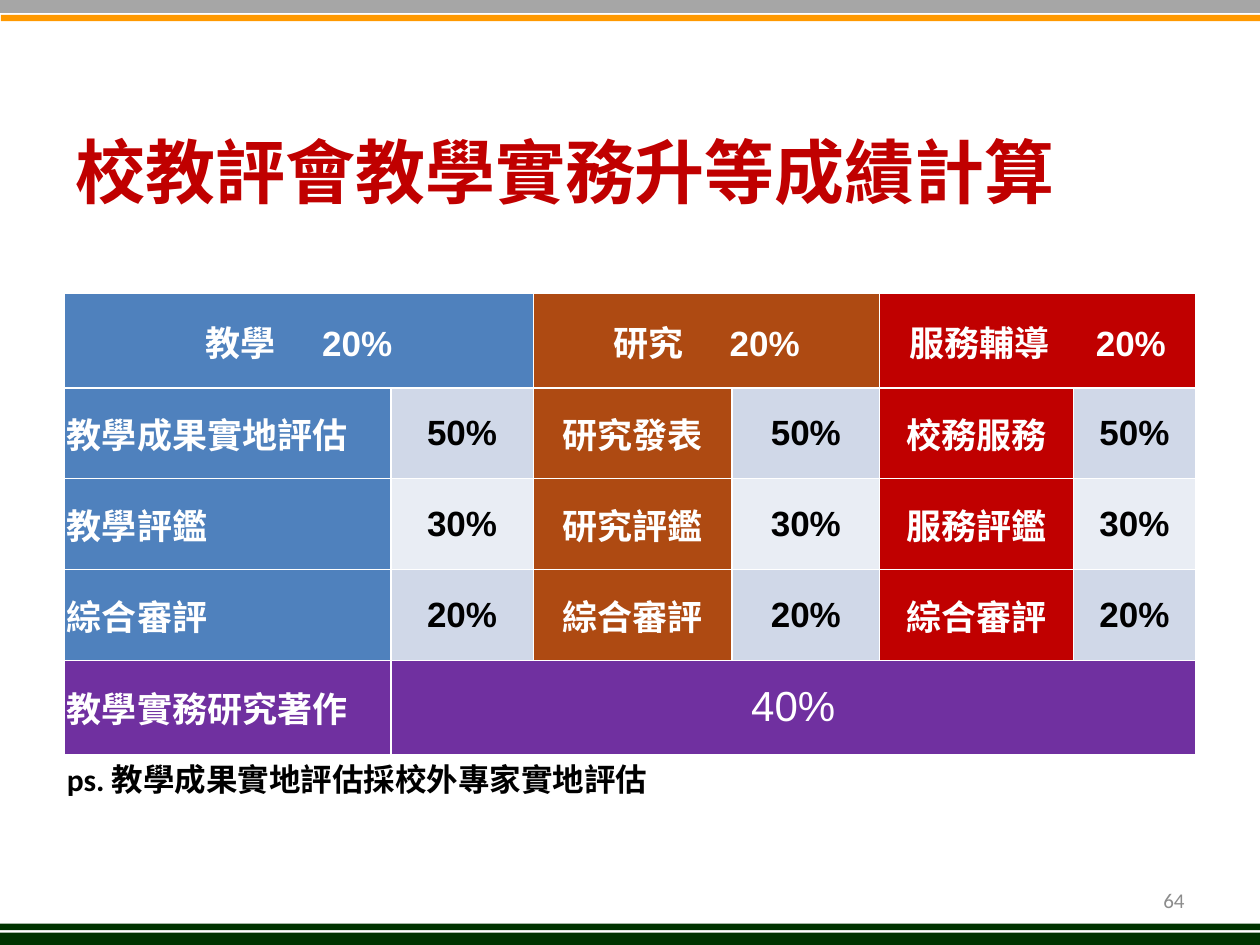
"""Build the slide on score weights for teaching-practice promotion."""
from lxml import etree
from pptx import Presentation
from pptx import util as u
from pptx.dml.color import RGBColor
from pptx.enum import shapes, text
from pptx.oxml.ns import qn

WHITE = RGBColor(0xFF, 0xFF, 0xFF)
BLACK = RGBColor(0x00, 0x00, 0x00)
GRAY = RGBColor(0xA6, 0xA6, 0xA6)
ORANGE = RGBColor(0xFF, 0x99, 0x00)
DARK_GREEN = RGBColor(0x00, 0x33, 0x00)
BLUE = RGBColor(0x4F, 0x81, 0xBD)
BROWN = RGBColor(0xAE, 0x4A, 0x12)
RED = RGBColor(0xC0, 0x00, 0x00)
PURPLE = RGBColor(0x70, 0x30, 0xA0)
BAND_DARK = RGBColor(0xD0, 0xD8, 0xE8)
BAND_LIGHT = RGBColor(0xE9, 0xED, 0xF4)
PAGE_GRAY = RGBColor(0x8C, 0x8C, 0x8C)
CJK_FONT = "Noto Sans CJK SC"
CENTER, LEFT, RIGHT = text.PP_ALIGN.CENTER, text.PP_ALIGN.LEFT, text.PP_ALIGN.RIGHT


def style(paragraph, size, color, font="Arial", bold=True, align=CENTER):
    paragraph.alignment = align
    for run in paragraph.runs:
        run.font.size = u.Pt(size)
        run.font.bold = bold
        run.font.color.rgb = color
        run.font.name = font
        etree.SubElement(run.font._element, qn("a:ea")).set("typeface", CJK_FONT)


def fill_cell(cell, words, fill, color=WHITE, size=20, **look):
    cell.margin_left = cell.margin_right = u.Cm(0.05)
    cell.margin_top = cell.margin_bottom = 0
    cell.vertical_anchor = text.MSO_ANCHOR.MIDDLE
    cell.fill.solid()
    cell.fill.fore_color.rgb = fill
    paragraph = cell.text_frame.paragraphs[0]
    for word in words:
        paragraph.add_run().text = word
    style(paragraph, size, color, **look)
    return paragraph


deck = Presentation()
deck.slide_width, deck.slide_height = u.Cm(25.4), u.Cm(19.05)
slide = deck.slides.add_slide(deck.slide_layouts[5])

for left, top, height, color in [
    (0, 0, 0.26, GRAY),
    (0.02, 0.3, 0.13, ORANGE),
    (-0.02, 18.8, 0.25, DARK_GREEN),
    (-0.02, 18.62, 0.13, DARK_GREEN),
]:
    stripe = slide.shapes.add_shape(
        shapes.MSO_SHAPE.RECTANGLE, u.Cm(left), u.Cm(top), u.Cm(25.42), u.Cm(height))
    stripe.shadow.inherit = False
    stripe.fill.solid()
    stripe.fill.fore_color.rgb = color
    stripe.line.fill.background()

title = slide.shapes.title
title.left, title.top, title.width, title.height = u.Cm(1.27), u.Cm(2.13), u.Cm(22.86), u.Cm(2.6)
title.text_frame.text = "校教評會教學實務升等成績計算"
title.text_frame.vertical_anchor = text.MSO_ANCHOR.MIDDLE
style(title.text_frame.paragraphs[0], 40, RED, CJK_FONT, align=LEFT)

column_widths = [6.58, 2.87, 4.01, 2.97, 3.91, 2.46]
row_heights = [1.9, 1.83, 1.83, 1.83, 1.9, 1.9]
scores = slide.shapes.add_table(
    6, 6, u.Cm(1.3), u.Cm(5.92), u.Cm(sum(column_widths)), u.Cm(sum(row_heights))).table
for column, width in zip(scores.columns, column_widths):
    column.width = u.Cm(width)
for row, height in zip(scores.rows, row_heights):
    row.height = u.Cm(height)

categories = [
    ("教學", BLUE, LEFT, ["教學成果實地評估", "教學評鑑", "綜合審評"]),
    ("研究", BROWN, CENTER, ["研究發表", "研究評鑑", "綜合審評"]),
    ("服務輔導", RED, CENTER, ["校務服務", "服務評鑑", "綜合審評"]),
]
weights = [("50%", BAND_DARK), ("30%", BAND_LIGHT), ("20%", BAND_DARK)]
for index, (category, color, align, items) in enumerate(categories):
    col = 2 * index
    scores.cell(0, col).merge(scores.cell(0, col + 1))
    heading = fill_cell(scores.cell(0, col), [category, " ", "20%"], color)
    heading.runs[1].font._element.set("spc", "2200")
    for row, (item, (weight, band)) in enumerate(zip(items, weights), start=1):
        fill_cell(scores.cell(row, col), [item], color, align=align)
        fill_cell(scores.cell(row, col + 1), [weight], band, BLACK)

scores.cell(4, 1).merge(scores.cell(4, 5))
fill_cell(scores.cell(4, 0), ["教學實務研究著作"], PURPLE, align=LEFT)
fill_cell(scores.cell(4, 1), ["40%"], PURPLE, size=24, bold=False)
scores.cell(5, 0).merge(scores.cell(5, 5))
fill_cell(scores.cell(5, 0), ["ps. 教學成果實地評估採校外專家實地評估"], WHITE, BLACK, 18,
          font="Calibri", align=LEFT)
scores.cell(5, 0).vertical_anchor = text.MSO_ANCHOR.TOP

page_number = slide.shapes.add_textbox(u.Cm(18.2), u.Cm(17.65), u.Cm(5.93), u.Cm(1.01)).text_frame
page_number.word_wrap = True
page_number.vertical_anchor = text.MSO_ANCHOR.MIDDLE
page_number.text = "64"
style(page_number.paragraphs[0], 12, PAGE_GRAY, "Calibri", False, RIGHT)

deck.save("out.pptx")
